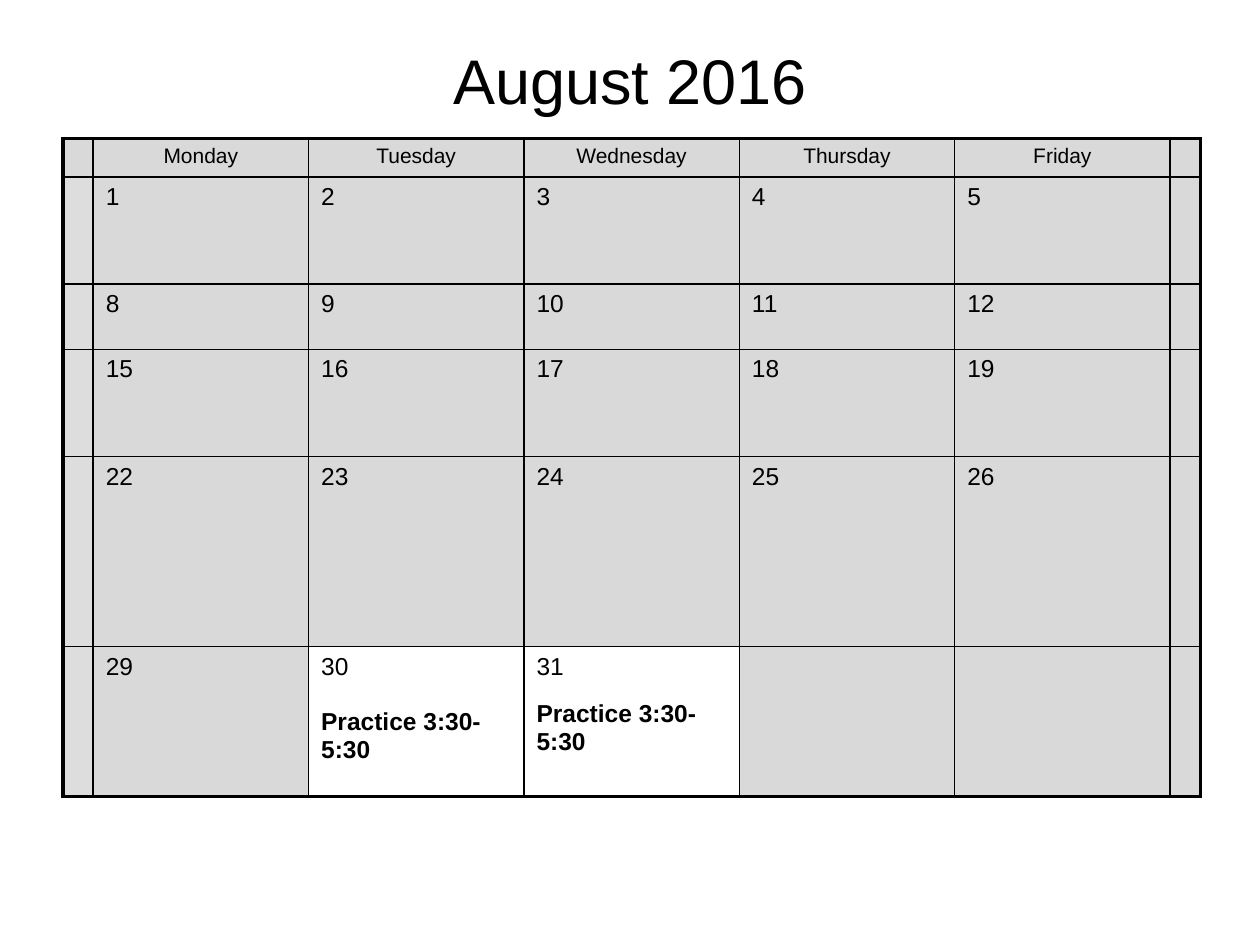
from dataclasses import dataclass

from lxml import etree
from pptx import Presentation
from pptx.dml.color import RGBColor
from pptx.enum.text import MSO_ANCHOR, PP_ALIGN
from pptx.oxml.ns import qn
from pptx.util import Pt

CENTER, LEFT = PP_ALIGN.CENTER, PP_ALIGN.LEFT
MIDDLE = MSO_ANCHOR.MIDDLE
TITLE_ONLY = 5


@dataclass(frozen=True)
class Theme:
    font: str = "Arial"
    ink: str = "000000"
    gray: str = "D9D9D9"
    edge: str = "DDDDDD"
    white: str = "FFFFFF"
    title: float = 36
    head: float = 12
    day: float = 14
    thin: float = 1
    thick: float = 2.25


THEME = Theme()
DAYS = ["Monday", "Tuesday", "Wednesday", "Thursday", "Friday"]
WIDTHS = [16.5] + [123.1] * 5 + [16.5]
HEIGHTS = [21.6, 61.2, 37.4, 61.2, 108.7, 85.7]
LAST = 31
# Day of the month: note and the gap above it
NOTES = {30: ("Practice 3:30-5:30", 16), 31: ("Practice 3:30-5:30", 11.5)}


def assign(item, values):
    for name, value in values.items():
        setattr(item, name, value)


def write(para, text, size, align=LEFT, bold=False, gap=0):
    """Fill one paragraph with a single styled run."""
    assign(para, {"alignment": align, "space_before": Pt(gap)})
    run = para.add_run()
    run.text = text
    assign(run.font, {"name": THEME.font, "size": Pt(size), "bold": bold})
    run.font.color.rgb = RGBColor.from_string(THEME.ink)


def border(cell, sides):
    """Draw the cell edges, given as side letter: line width."""
    props = cell._tc.get_or_add_tcPr()
    for side, width in sides.items():
        line = etree.SubElement(props, qn(f"a:ln{side}"), w=str(Pt(width)))
        fill = etree.SubElement(line, qn("a:solidFill"))
        etree.SubElement(fill, qn("a:srgbClr"), val=THEME.ink)


def paint(cell, color):
    cell.fill.solid()
    cell.fill.fore_color.rgb = RGBColor.from_string(color)


def shrink(cell):
    """Keep an empty cell from stretching its row."""
    para = cell.text_frame.paragraphs[0]._p
    etree.SubElement(para, qn("a:endParaRPr"), sz=str(THEME.head * 100))


def add_title(slide, text):
    title = slide.shapes.title
    assign(title, {"left": Pt(36), "top": Pt(21.6),
                   "width": Pt(648), "height": Pt(47.5)})
    assign(title.text_frame, {"vertical_anchor": MIDDLE, "word_wrap": True})
    write(title.text_frame.paragraphs[0], text, THEME.title, CENTER)


def fill_cell(cell, row, col):
    """Write the weekday, or the date with its note."""
    frame = cell.text_frame
    para = frame.paragraphs[0]
    date = 7 * (row - 1) + col
    color = THEME.edge if row and col == 0 else THEME.gray
    if not 1 <= col <= len(DAYS) or date > LAST:
        shrink(cell)
    elif row == 0:
        write(para, DAYS[col - 1], THEME.head, CENTER)
    else:
        write(para, str(date), THEME.day)
        if date in NOTES:
            note, gap = NOTES[date]
            write(frame.add_paragraph(), note, THEME.day, bold=True, gap=gap)
            color = THEME.white
    paint(cell, color)


def add_month(slide):
    rows, cols = len(HEIGHTS), len(WIDTHS)
    grid = slide.shapes.add_table(rows, cols, Pt(36), Pt(79.2),
                                  Pt(sum(WIDTHS)), Pt(sum(HEIGHTS))).table
    for col, width in zip(grid.columns, WIDTHS):
        col.width = Pt(width)
    for row, height in zip(grid.rows, HEIGHTS):
        row.height = Pt(height)

    # Outer edges are thick, inner ones thin
    for r in range(rows):
        for c in range(cols):
            cell = grid.cell(r, c)
            outer = {"L": c == 0, "R": c == cols - 1,
                     "T": r == 0, "B": r == rows - 1}
            border(cell, {side: THEME.thick if out else THEME.thin
                          for side, out in outer.items()})
            fill_cell(cell, r, c)


def main():
    deck = Presentation()
    assign(deck, {"slide_width": Pt(720), "slide_height": Pt(540)})
    slide = deck.slides.add_slide(deck.slide_layouts[TITLE_ONLY])
    # Heading
    add_title(slide, "August 2016")
    # Calendar
    add_month(slide)
    deck.save("out.pptx")


if __name__ == "__main__":
    main()
